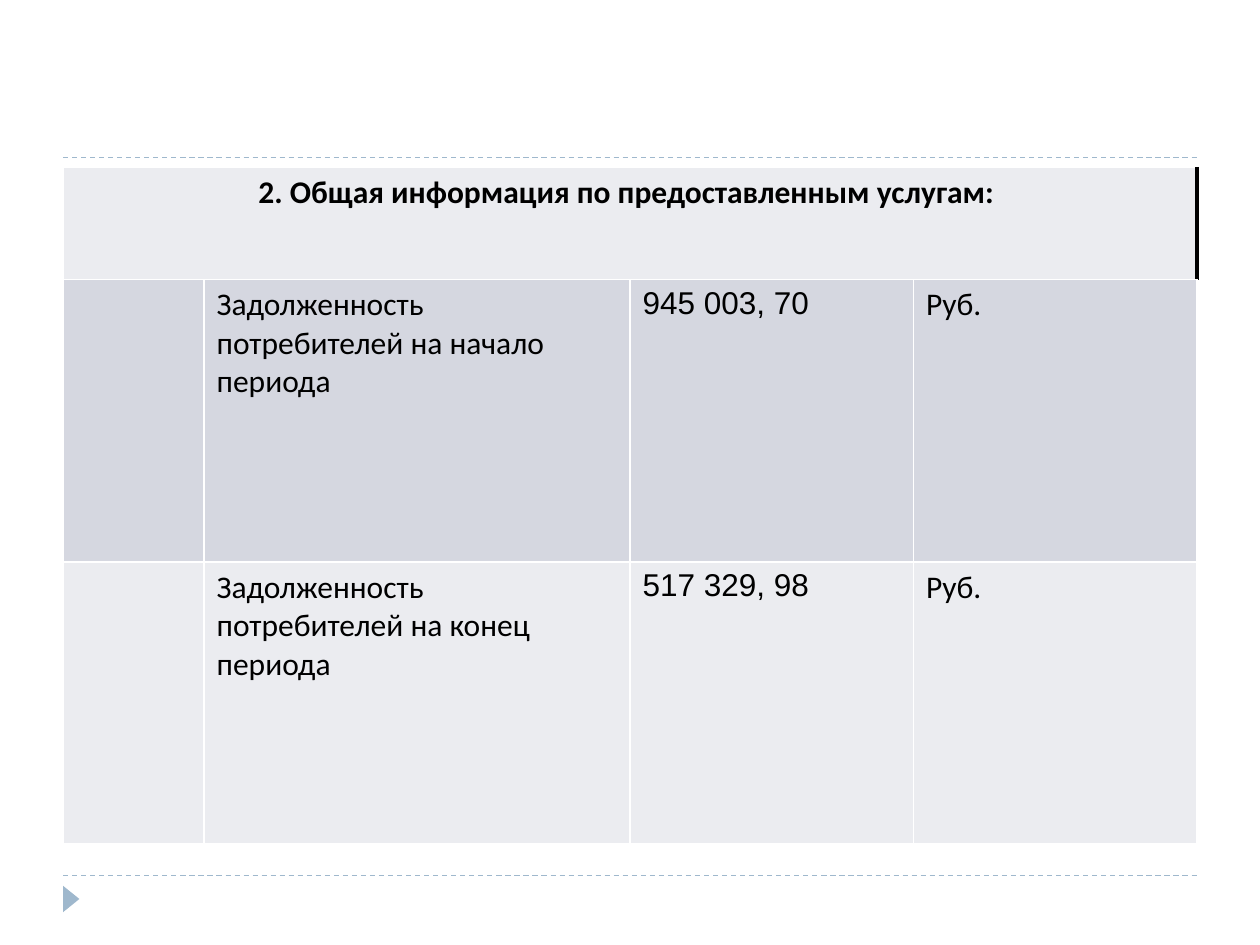
"""Build a slide with a table of consumer debt at the start and end of a period."""
from dataclasses import dataclass

from lxml.etree import SubElement
from pptx import Presentation
from pptx.dml.color import RGBColor
from pptx.enum.dml import MSO_LINE
from pptx.enum.shapes import MSO_CONNECTOR, MSO_SHAPE
from pptx.enum.text import PP_ALIGN
from pptx.oxml.ns import qn
from pptx.slide import Slide
from pptx.table import Table, _Cell
from pptx.util import Inches, Pt

ACCENT = RGBColor(0x9F, 0xB8, 0xCD)
LIGHT_BAND = RGBColor(0xEB, 0xEC, 0xF0)
DARK_BAND = RGBColor(0xD5, 0xD7, 0xE0)
WHITE = RGBColor(0xFF, 0xFF, 0xFF)
BLACK = RGBColor(0x00, 0x00, 0x00)

LEFT, WIDTH = 0.5, 9
RULE_TOPS = (1.25, 6.95)
COLUMN_WIDTHS = (1.12, 3.38, 2.25, 2.25)
ROW_HEIGHTS = (0.89, 2.24, 2.24)
COLUMN_FONTS = ("Calibri", "Calibri", "Arial", "Calibri")
TITLE = "2. Общая информация по предоставленным услугам: "


@dataclass(frozen=True)
class Debt:
    """One row of the table."""

    label: str
    amount: str
    fill: RGBColor
    unit: str = "Руб."


DEBTS = (
    Debt("Задолженность потребителей на начало периода", "945 003, 70", DARK_BAND),
    Debt("Задолженность потребителей на конец периода", "517 329, 98", LIGHT_BAND),
)


def add_rule(slide: Slide, top: float) -> None:
    """Draw a dashed rule across the content width."""
    rule = slide.shapes.add_connector(
        MSO_CONNECTOR.STRAIGHT, Inches(LEFT), Inches(top), Inches(LEFT + WIDTH), Inches(top)
    )
    rule.line.color.rgb = ACCENT
    rule.line.width = Pt(0.75)
    rule.line.dash_style = MSO_LINE.DASH
    SubElement(rule._element.spPr, qn("a:effectLst"))


def add_marker(slide: Slide) -> None:
    """Draw the small triangle that points right at the foot of the slide."""
    marker = slide.shapes.add_shape(
        MSO_SHAPE.ISOSCELES_TRIANGLE, Inches(0.46), Inches(7.07), Inches(0.21), Inches(0.13)
    )
    marker.rotation = 90
    marker.shadow.inherit = False
    marker.fill.solid()
    marker.fill.fore_color.rgb = ACCENT
    marker.line.fill.background()


def add_border(cell: _Cell, side: str, color: RGBColor, width: float) -> None:
    """Add a solid border to one side of a cell."""
    properties = cell._tc.get_or_add_tcPr()
    border = SubElement(properties, qn(f"a:ln{side}"), w=str(Pt(width)))
    SubElement(SubElement(border, qn("a:solidFill")), qn("a:srgbClr"), val=str(color))


def style_cell(cell: _Cell, fill: RGBColor, right_color: RGBColor = WHITE, right_width: float = 1) -> None:
    """Give a cell its borders and its fill."""
    add_border(cell, "L", WHITE, 1)
    add_border(cell, "R", right_color, right_width)
    add_border(cell, "T", WHITE, 1)
    add_border(cell, "B", WHITE, 1)
    cell.fill.solid()
    cell.fill.fore_color.rgb = fill


def write_cell(cell: _Cell, text: str, font_name: str, bold: bool = False) -> None:
    """Put text of the table's size and colour in a cell."""
    paragraph = cell.text_frame.paragraphs[0]
    paragraph.text = text
    paragraph.font.name = font_name
    paragraph.font.size = Pt(18)
    paragraph.font.bold = bold
    paragraph.font.color.rgb = BLACK


def fill_title_row(table: Table) -> None:
    """Merge the first row and write the centred title in it."""
    for cell in table.rows[0].cells:
        style_cell(cell, LIGHT_BAND, BLACK, 2.25)
    title_cell = table.cell(0, 0)
    title_cell.merge(table.cell(0, len(COLUMN_WIDTHS) - 1))
    write_cell(title_cell, TITLE, "Calibri", bold=True)
    title_cell.text_frame.paragraphs[0].alignment = PP_ALIGN.CENTER


def add_debt_table(slide: Slide) -> None:
    """Add the table with its title row and one row per debt."""
    table = slide.shapes.add_table(
        len(ROW_HEIGHTS), len(COLUMN_WIDTHS),
        Inches(LEFT), Inches(1.33), Inches(WIDTH), Inches(sum(ROW_HEIGHTS)),
    ).table
    table.first_row = False
    table.horz_banding = False
    for column, width in zip(table.columns, COLUMN_WIDTHS):
        column.width = Inches(width)
    for row, height in zip(table.rows, ROW_HEIGHTS):
        row.height = Inches(height)
    fill_title_row(table)
    for row_index, debt in enumerate(DEBTS, start=1):
        texts = ("", debt.label, debt.amount, debt.unit)
        for cell, text, font_name in zip(table.rows[row_index].cells, texts, COLUMN_FONTS):
            style_cell(cell, debt.fill)
            write_cell(cell, text, font_name)


def main() -> None:
    """Build and save the presentation."""
    presentation = Presentation()
    presentation.slide_width = Inches(10)
    presentation.slide_height = Inches(7.5)
    slide = presentation.slides.add_slide(presentation.slide_layouts[6])
    for top in RULE_TOPS:
        add_rule(slide, top)
    add_marker(slide)
    add_debt_table(slide)
    presentation.save("out.pptx")


if __name__ == "__main__":
    main()
